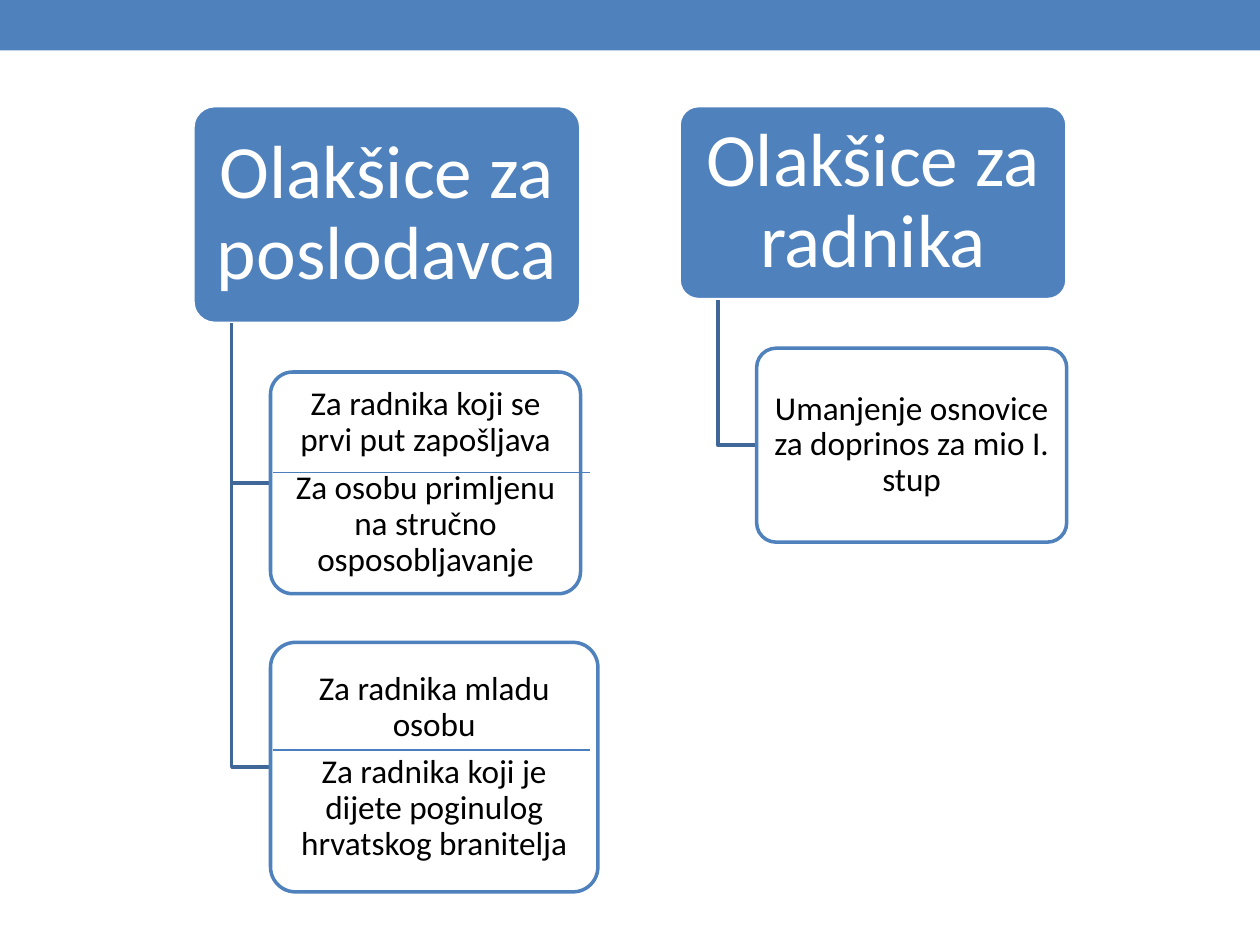
from dataclasses import dataclass

from lxml import etree
from pptx import Presentation
from pptx import util as u
from pptx.dml.color import RGBColor
from pptx.enum import shapes, text
from pptx.oxml import ns


@dataclass(frozen=True)
class Theme:
    blue: RGBColor = RGBColor(0x4F, 0x81, 0xBD)
    branch: RGBColor = RGBColor(0x3F, 0x67, 0x97)
    divider: RGBColor = RGBColor(0x4B, 0x7E, 0xBC)
    white: RGBColor = RGBColor(0xFF, 0xFF, 0xFF)
    black: RGBColor = RGBColor(0, 0, 0)
    font: str = "Calibri"
    heading_size: int = 43
    detail_size: int = 19
    outline: float = 2
    thin: float = 0.75


THEME = Theme()
HEADING_TOP = 2.13
HEADING_WIDTH = 7.82
GAP = 0.98

COLUMNS = [
    (3.89, 4.39, "Olakšice za poslodavca", [
        (6.25, 4.47, ["Za radnika koji se prvi put zapošljava",
                      "Za osobu primljenu na stručno osposobljavanje"]),
        (6.6, 5.03, ["Za radnika mladu osobu",
                     "Za radnika koji je dijete poginulog hrvatskog branitelja"]),
    ]),
    (13.69, 3.91, "Olakšice za radnika", [
        (6.25, 3.91, ["Umanjenje osnovice za doprinos za mio I. stup"]),
    ]),
]


def write_text(shape, lines, *, size, color, margin_x, margin_y):
    frame = shape.text_frame
    frame.word_wrap = True
    frame.vertical_anchor = text.MSO_ANCHOR.MIDDLE
    frame.margin_left = frame.margin_right = u.Cm(margin_x)
    frame.margin_top = frame.margin_bottom = u.Cm(margin_y)
    for index, line in enumerate(lines):
        paragraph = frame.add_paragraph() if index else frame.paragraphs[0]
        paragraph.alignment = text.PP_ALIGN.CENTER
        paragraph.line_spacing = 0.9
        paragraph.space_after = u.Pt(0.35 * size)
        run = paragraph.add_run()
        run.text = line
        run.font.name = THEME.font
        run.font.size = u.Pt(size)
        run.font.color.rgb = color


def add_panel(slide, kind, left, top, width, height, fill, line=None):
    panel = slide.shapes.add_shape(kind, u.Cm(left), u.Cm(top), u.Cm(width), u.Cm(height))
    panel.shadow.inherit = False
    panel.fill.solid()
    panel.fill.fore_color.rgb = fill
    if line is None:
        panel.line.fill.background()
    else:
        panel.adjustments[0] = 0.1
        panel.line.color.rgb = line
        panel.line.width = u.Pt(THEME.outline)
    return panel


def set_opacity(shape, percent):
    color = shape.fill._xPr.find(ns.qn("a:solidFill"))[0]
    etree.SubElement(color, ns.qn("a:alpha"), val=str(percent * 1000))


def add_branch(slide, x, top, end_x, end_y):
    builder = slide.shapes.build_freeform(u.Cm(x), u.Cm(top))
    builder.add_line_segments([(u.Cm(x), u.Cm(end_y)), (u.Cm(end_x), u.Cm(end_y))], close=False)
    branch = builder.convert_to_shape()
    branch.shadow.inherit = False
    branch.fill.background()
    branch.line.color.rgb = THEME.branch
    branch.line.width = u.Pt(THEME.outline)


def add_divider(slide, left, right, y):
    divider = slide.shapes.add_connector(
        shapes.MSO_CONNECTOR.STRAIGHT, u.Cm(left), u.Cm(y), u.Cm(right), u.Cm(y))
    divider.line.color.rgb = THEME.divider
    divider.line.width = u.Pt(THEME.thin)
    etree.SubElement(divider._element.spPr, ns.qn("a:effectLst"))


def add_column(slide, left, height, heading, details):
    rounded = shapes.MSO_SHAPE.ROUNDED_RECTANGLE
    panel = add_panel(slide, rounded, left, HEADING_TOP, HEADING_WIDTH, height,
                      THEME.blue, THEME.white)
    write_text(panel, [heading], size=THEME.heading_size, color=THEME.white,
               margin_x=0.24, margin_y=0.16)
    bottom = HEADING_TOP + height
    trunk = left + HEADING_WIDTH * 0.1
    detail_left = left + HEADING_WIDTH * 0.2
    top = bottom + GAP
    for detail_width, detail_height, lines in details:
        add_branch(slide, trunk, bottom, detail_left, top + detail_height / 2)
        panel = add_panel(slide, rounded, detail_left, top, detail_width, detail_height,
                          THEME.white, THEME.blue)
        set_opacity(panel, 90)
        write_text(panel, lines, size=THEME.detail_size, color=THEME.black,
                   margin_x=0.11, margin_y=0.07)
        top += detail_height + GAP


def main():
    presentation = Presentation()
    presentation.slide_width = u.Cm(25.4)
    presentation.slide_height = u.Cm(19.05)
    slide = presentation.slides.add_slide(presentation.slide_layouts[6])
    add_panel(slide, shapes.MSO_SHAPE.RECTANGLE, 0, 0, 25.4, 1.02, THEME.blue)
    for column in COLUMNS:
        add_column(slide, *column)
    for y in (9.52, 15.12):
        add_divider(slide, 5.5, 11.9, y)
    presentation.save("out.pptx")


if __name__ == "__main__":
    main()
